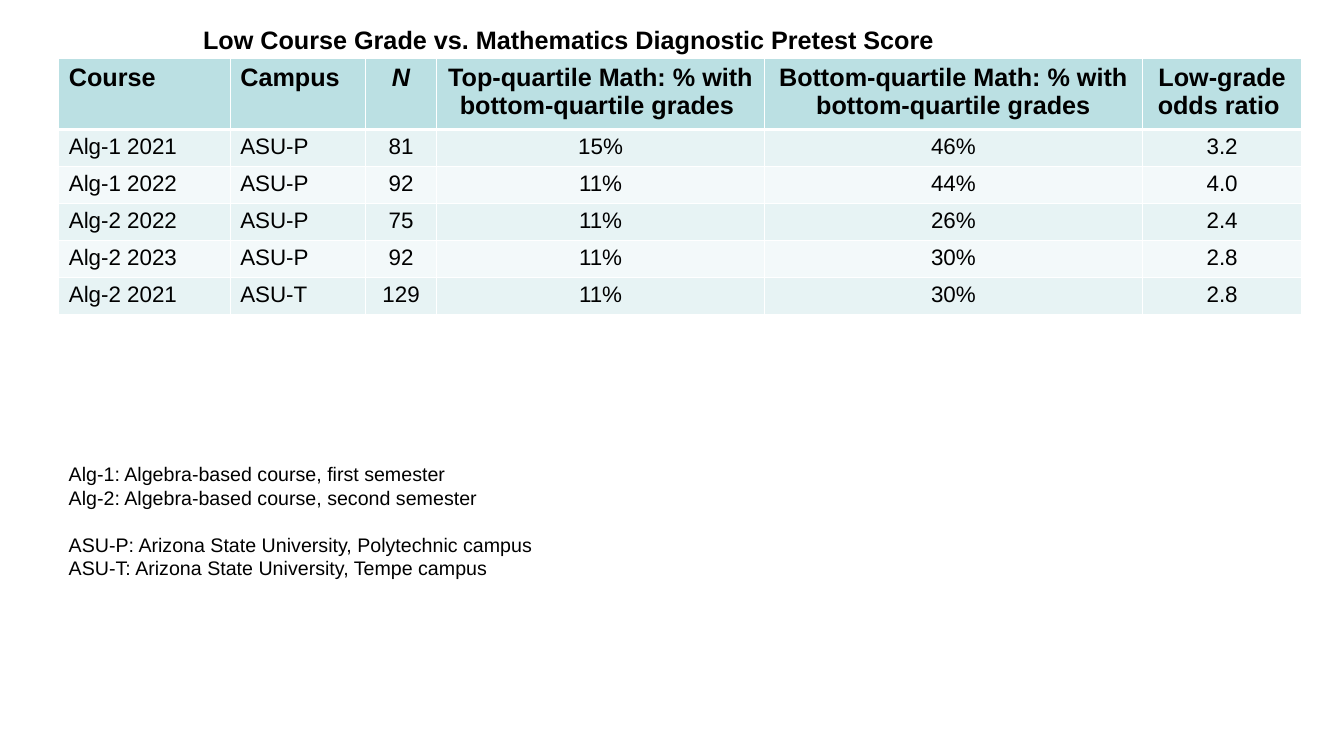
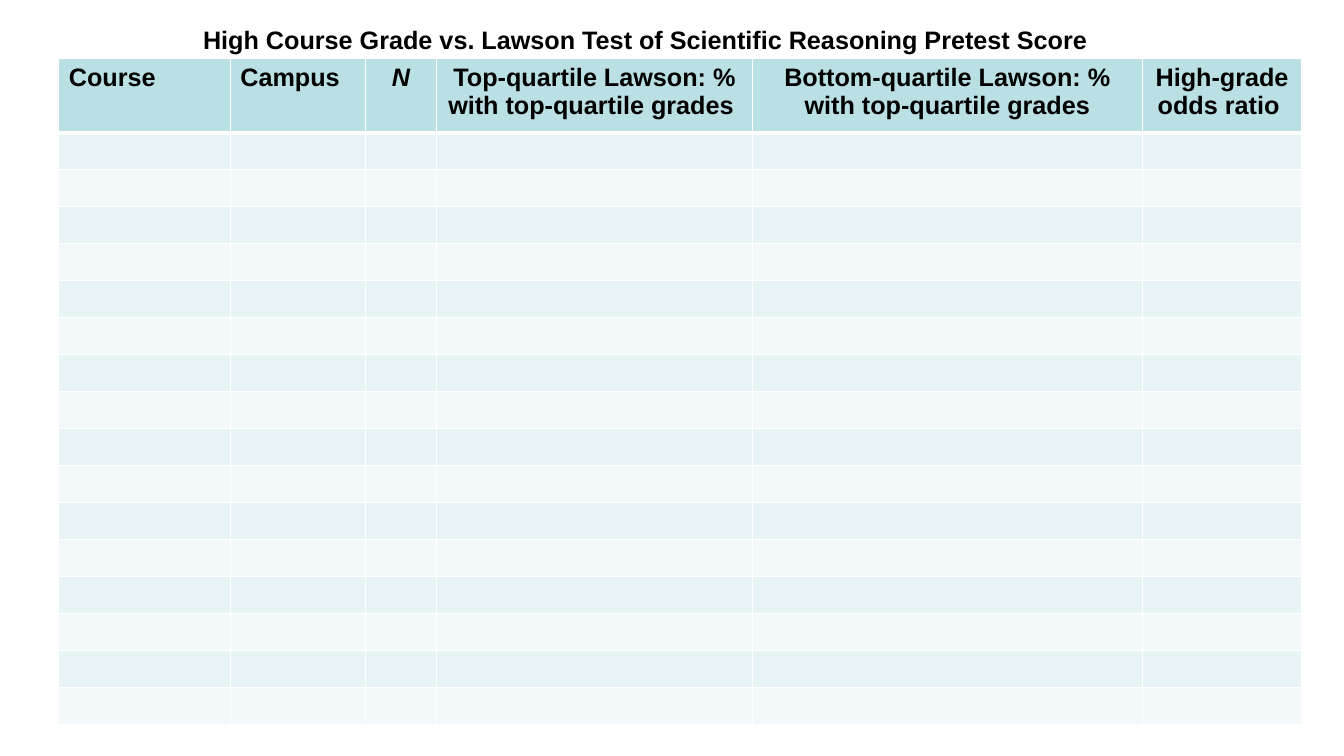
import dataclasses

import lxml.etree
import pptx
import pptx.dml.color
import pptx.enum.text
import pptx.oxml.ns
import pptx.util

Pt = pptx.util.Pt
RGB = pptx.dml.color.RGBColor
CENTER = pptx.enum.text.PP_ALIGN.CENTER
LEFT = pptx.enum.text.PP_ALIGN.LEFT


@dataclasses.dataclass(frozen=True)
class Theme:
    """Colours in hexadecimal and type sizes in points."""

    font: str = "Arial"
    text: str = "000000"
    border: str = "FFFFFF"
    header: str = "BBE0E3"
    bands: tuple = ("E7F3F4", "F3F9FA")
    title_size: int = 18
    header_size: int = 18
    body_size: int = 16
    note_size: int = 14


THEME = Theme()
SLIDE_SIZE = (960, 540)
TITLE_BOX = (138, 13.6, 670, 29)
TABLE_BOX = (42, 42, 888)
NOTES_BOX = (42, 326.5, 450, 92)
NOTES_GAP = 16.8
LEFT_COLUMNS = 2
ITALIC_COLUMN = 2

COURSE_ROWS = [
    ("Alg-1 2021", "ASU-P", "81", "15%", "46%", "3.2"),
    ("Alg-1 2022", "ASU-P", "92", "11%", "44%", "4.0"),
    ("Alg-2 2022", "ASU-P", "75", "11%", "26%", "2.4"),
    ("Alg-2 2023", "ASU-P", "92", "11%", "30%", "2.8"),
    ("Alg-2 2021", "ASU-T", "129", "11%", "30%", "2.8"),
]
EMPTY_ROWS = [("",) * 6] * 16
NOTE_GROUPS = [
    ("Alg-1: Algebra-based course, first semester",
     "Alg-2: Algebra-based course, second semester"),
    ("ASU-P: Arizona State University, Polytechnic campus",
     "ASU-T: Arizona State University, Tempe campus"),
]


def format_runs(paragraph, size, bold=False, italic=False):
    """Apply the theme font to every run and to the paragraph end."""
    for run in paragraph.runs:
        run.font.name = THEME.font
        run.font.size = Pt(size)
        run.font.bold = bold
        run.font.italic = italic
        run.font.color.rgb = RGB.from_string(THEME.text)
    if not paragraph.runs:
        paragraph._p.get_or_add_endParaRPr().set("sz", str(size * 100))


def add_text_box(slide, box):
    """Add a wrapping text box and return its text frame."""
    text_frame = slide.shapes.add_textbox(*map(Pt, box)).text_frame
    text_frame.word_wrap = True
    return text_frame


def add_title(slide, box, title):
    """Add the bold title line above the table."""
    text_frame = add_text_box(slide, box)
    text_frame.text = title
    format_runs(text_frame.paragraphs[0], THEME.title_size, bold=True)


def add_notes(slide, box, groups):
    """Add groups of explanatory lines with a gap between groups."""
    text_frame = add_text_box(slide, box)
    text_frame.text = "\n".join(line for group in groups for line in group)
    for paragraph in text_frame.paragraphs:
        format_runs(paragraph, THEME.note_size)
    first = 0
    for group in groups[:-1]:
        first += len(group)
        text_frame.paragraphs[first].space_before = Pt(NOTES_GAP)


def set_borders(cell, widths):
    """Draw solid borders on a cell, with widths keyed by side."""
    qualified = pptx.oxml.ns.qn
    properties = cell._tc.get_or_add_tcPr()
    for side, width in widths.items():
        line = lxml.etree.SubElement(properties, qualified(f"a:ln{side}"), w=str(Pt(width)))
        fill = lxml.etree.SubElement(line, qualified("a:solidFill"))
        lxml.etree.SubElement(fill, qualified("a:srgbClr"), val=THEME.border)


def style_cell(cell, text, row, column):
    """Fill one cell according to its row and column."""
    is_header = row == 0
    set_borders(cell, {"L": 1, "R": 1, "T": 3 if row == 1 else 1, "B": 3 if is_header else 1})
    colour = THEME.header if is_header else THEME.bands[(row - 1) % 2]
    cell.fill.solid()
    cell.fill.fore_color.rgb = RGB.from_string(colour)
    cell.text_frame.text = text
    paragraph = cell.text_frame.paragraphs[0]
    paragraph.alignment = LEFT if column < LEFT_COLUMNS else CENTER
    size = THEME.header_size if is_header else THEME.body_size
    format_runs(paragraph, size, is_header, is_header and column == ITALIC_COLUMN)


def add_grade_table(slide, box, rows, top_width, header_height, row_height):
    """Add the banded table; the two quartile columns share a fixed width."""
    left, top, width = box
    outer_widths = (122.5, 96.5, 51, 114)
    bottom_width = width - sum(outer_widths) - top_width
    widths = (*outer_widths[:3], top_width, bottom_width, outer_widths[3])
    heights = [header_height] + [row_height] * (len(rows) - 1)
    frame = slide.shapes.add_table(
        len(rows), len(widths), Pt(left), Pt(top), Pt(width), Pt(sum(heights)))
    table = frame.table
    for column, column_width in zip(table.columns, widths):
        column.width = Pt(column_width)
    for row_index, (row, height) in enumerate(zip(rows, heights)):
        table.rows[row_index].height = Pt(height)
        for column_index, text in enumerate(row):
            style_cell(table.cell(row_index, column_index), text, row_index, column_index)


def add_grade_slide(presentation, title, headings, rows, **table_sizes):
    """Add a slide with a title and a grade table."""
    slide = presentation.slides.add_slide(presentation.slide_layouts[6])
    header = ("Course", "Campus", "N", *headings)
    add_grade_table(slide, TABLE_BOX, [header, *rows], **table_sizes)
    add_title(slide, TITLE_BOX, title)
    return slide


def main():
    """Build and save the presentation."""
    presentation = pptx.Presentation()
    presentation.slide_width, presentation.slide_height = map(Pt, SLIDE_SIZE)
    slide = add_grade_slide(
        presentation,
        "Low Course Grade vs. Mathematics Diagnostic Pretest Score",
        ("Top-quartile Math: % with bottom-quartile grades ",
         "Bottom-quartile Math: % with bottom-quartile grades",
         "Low-grade odds ratio "),
        COURSE_ROWS, top_width=234, header_height=50.4, row_height=26.4)
    add_notes(slide, NOTES_BOX, NOTE_GROUPS)
    add_grade_slide(
        presentation,
        "High Course Grade vs. Lawson Test of Scientific Reasoning Pretest Score",
        ("Top-quartile Lawson: % with top-quartile grades ",
         "Bottom-quartile Lawson: % with top-quartile grades",
         "High-grade odds ratio "),
        EMPTY_ROWS, top_width=225.5, header_height=52.9, row_height=26.4)
    presentation.save("out.pptx")


if __name__ == "__main__":
    main()
